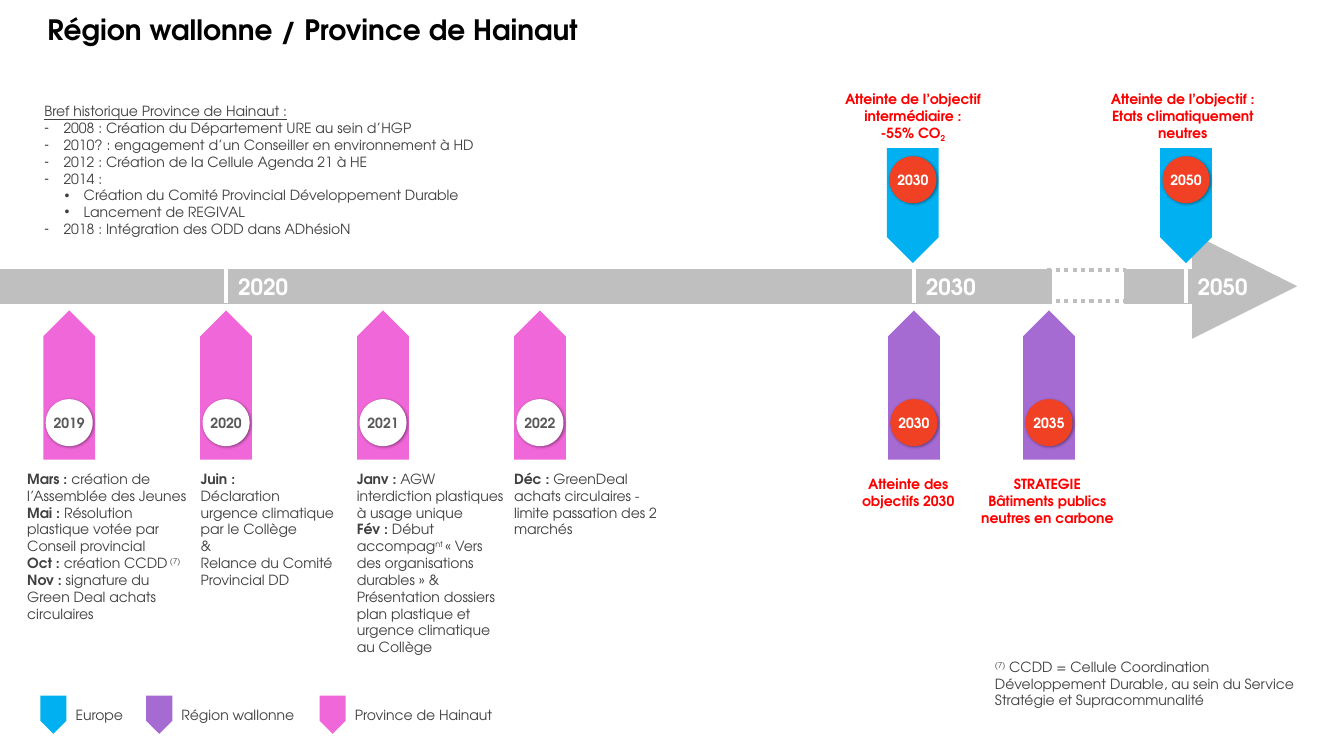
from lxml.etree import SubElement
from pptx import Presentation
from pptx.dml.color import RGBColor
from pptx.enum.dml import MSO_LINE
from pptx.enum.shapes import MSO_CONNECTOR, MSO_SHAPE
from pptx.enum.text import MSO_ANCHOR, MSO_AUTO_SIZE, PP_ALIGN
from pptx.oxml.ns import qn
from pptx.util import Inches, Pt

COLS, ROWS = 40, 22.5
CELL = Inches(1 / 3)
FONT = "TeX Gyre Adventor"
COLORS = {
    "black": "000000", "text": "404040", "year": "595959", "white": "FFFFFF",
    "goal": "FF0000", "disc": "F14124", "axis": "BFBFBF",
    "europe": "00B0F0", "region": "A66BD3", "province": "EF67D8",
}
BOLD = {"bold": True}
SUP = {"base": 30}
SUB = {"base": -25}


def rgb(name):
    return RGBColor.from_string(COLORS[name])


def grid(*cells):
    return [round(c * CELL) for c in cells]


def write(p, text, size=10, color="text", bold=False, underline=False, base=0):
    r = p.add_run()
    r.text = text
    f = r.font
    f.name, f.size, f.bold, f.underline = FONT, Pt(size), bold, underline
    f.color.rgb = rgb(color)
    if base:
        r._r.get_or_add_rPr().set("baseline", str(base * 1000))


class Board:
    """Current slide, measured in grid cells, and its drawing style."""

    def __init__(self, s):
        self.s = s

    def fill_text(self, sp, paragraphs, align=PP_ALIGN.LEFT,
                  anchor=MSO_ANCHOR.TOP, wrap=True, **style):
        """Each paragraph is a string or a list of strings and (string, format)."""
        tf = sp.text_frame
        tf.margin_left = tf.margin_right = tf.margin_top = tf.margin_bottom = 0
        tf.word_wrap, tf.vertical_anchor = wrap, anchor
        tf.auto_size = MSO_AUTO_SIZE.NONE
        for i, runs in enumerate(paragraphs):
            p = tf.paragraphs[0] if i == 0 else tf.add_paragraph()
            p.alignment, p.space_before = align, Pt(0)
            for run in [runs] if isinstance(runs, str) else runs:
                text, extra = (run, {}) if isinstance(run, str) else run
                write(p, text, **{**style, **extra})
        return tf

    def text(self, x, y, w, h, paragraphs, **style):
        sp = self.s.shapes.add_textbox(*grid(x, y, w, h))
        self.fill_text(sp, paragraphs, **style)

    def placeholder(self, idx, x, y, w, h, paragraphs, **style):
        sp = self.s.placeholders[idx]
        sp.left, sp.top, sp.width, sp.height = grid(x, y, w, h)
        return self.fill_text(sp, paragraphs, **style)

    def bullet(self, p, char, indent):
        pPr = p._p.get_or_add_pPr()
        pPr.set("marL", str(Inches(indent)))
        pPr.set("indent", str(-Inches(0.19) if char else 0))
        if char:
            SubElement(pPr, qn("a:buChar"), char=char)
        else:
            SubElement(pPr, qn("a:buNone"))

    def shape(self, kind, x, y, w, h, color):
        sp = self.s.shapes.add_shape(kind, *grid(x, y, w, h))
        sp.shadow.inherit = False
        sp.fill.solid()
        sp.fill.fore_color.rgb = rgb(color)
        sp.line.fill.background()
        return sp

    def pointer(self, x, y, w, h, color, up=False):
        sp = self.shape(MSO_SHAPE.DOWN_ARROW, x, y, w, h, color)
        sp.adjustments[0], sp.adjustments[1] = 1, 0.5
        sp.rotation = 180 if up else 0

    def disc(self, cx, y, year, color, ink):
        size = 1.4
        sp = self.shape(MSO_SHAPE.OVAL, cx - size / 2, y, size, size, color)
        effects = sp._element.spPr.find(qn("a:effectLst"))
        shadow = SubElement(effects, qn("a:outerShdw"), blurRad=str(Pt(2)),
                            dist=str(Pt(1)), dir="2700000", rotWithShape="0")
        black = SubElement(shadow, qn("a:srgbClr"), val=COLORS["black"])
        SubElement(black, qn("a:alpha"), val="40000")
        self.fill_text(sp, [year], align=PP_ALIGN.CENTER, wrap=False,
                       anchor=MSO_ANCHOR.MIDDLE, color=ink, bold=True)

    def line(self, x1, y1, x2, y2, color, width, dash=None, arrow=False):
        c = self.s.shapes.add_connector(MSO_CONNECTOR.STRAIGHT, *grid(x1, y1, x2, y2))
        c.line.color.rgb = rgb(color)
        c.line.width = Pt(width)
        if dash:
            c.line.dash_style = dash
        if arrow:
            SubElement(c.line._get_or_add_ln(), qn("a:tailEnd"), type="triangle")
        SubElement(c._element.spPr, qn("a:effectLst"))

    def milestone(self, cx, year, color, above=False, disc="disc", ink="white"):
        w = 1.54
        y, h, disc_y = (4.41, 3.42, 4.65) if above else (9.24, 4.44, 11.88)
        self.pointer(cx - w / 2, y, w, h, color, up=not above)
        self.disc(cx, disc_y, year, disc, ink)

    def goal(self, cx, y, w, paragraphs):
        self.text(cx - w / 2, y, w, 1.5, paragraphs, align=PP_ALIGN.CENTER,
                  color="goal", bold=True)


HISTORY = [
    ("", 0, "Bref historique Province de Hainaut :"),
    ("-", 0.19, "2008 : Création du Département URE au sein d’HGP"),
    ("-", 0.19, "2010? : engagement d’un Conseiller en environnement à HD"),
    ("-", 0.19, "2012 : Création de la Cellule Agenda 21 à HE"),
    ("-", 0.19, "2014 :"),
    ("•", 0.39, "Création du Comité Provincial Développement Durable"),
    ("•", 0.39, "Lancement de REGIVAL"),
    ("-", 0.19, "2018 : Intégration des ODD dans ADhésioN"),
]
# Year, text left, text width, paragraphs
PROVINCE = [
    ("2019", 0.81, 4.77, [
        [("Mars : ", BOLD), "création de l’Assemblée des Jeunes"],
        [("Mai : ", BOLD), "Résolution plastique votée par Conseil provincial"],
        [("Oct : ", BOLD), "création CCDD", (" (7)", SUP)],
        [("Nov : ", BOLD), "signature du Green Deal achats circulaires"]]),
    ("2020", 5.97, 4.14, [
        [("Juin :", BOLD)], "Déclaration urgence climatique par le Collège",
        "&", "Relance du Comité Provincial DD"]),
    ("2021", 10.62, 4.47, [
        [("Janv : ", BOLD), "AGW interdiction plastiques à usage unique"],
        [("Fév : ", BOLD), "Début accompag", ("nt ", SUP),
         "« Vers des organisations durables » &"],
        "Présentation dossiers plan plastique et urgence climatique au Collège"]),
    ("2022", 15.3, 4.26, [
        [("Déc : ", BOLD),
         "GreenDeal achats circulaires - limite passation des 2 marchés"]]),
]
# Arrow centre, year, colour, above the axis, text centre, top, width, paragraphs
GOALS = [
    (27.2, "2030", "region", False, 27.03, 14.16, 4.02,
     ["Atteinte des objectifs 2030"]),
    (31.22, "2035", "region", False, 31.17, 14.16, 4.26,
     ["STRATEGIE", "Bâtiments publics neutres en carbone"]),
    (27.17, "2030", "europe", True, 27.17, 2.7, 4.35,
     ["Atteinte de l’objectif intermédiaire :", ["-55% CO", ("2", SUB)]]),
    (35.3, "2050", "europe", True, 35.2, 2.7, 4.35,
     ["Atteinte de l’objectif :", "Etats climatiquement neutres"]),
]
LEGEND = [(1.2, "europe", "Europe"), (4.35, "region", "Région wallonne"),
          (9.51, "province", "Province de Hainaut")]


def main():
    prs = Presentation()
    prs.slide_width, prs.slide_height = grid(COLS, ROWS)
    b = Board(prs.slides.add_slide(prs.slide_layouts[1]))

    # Title and history list
    tf = b.placeholder(0, 1.41, 0.48, 37.2, 1.77,
                       ["Région wallonne / Province de Hainaut"],
                       size=20, color="black", bold=True)
    tf.paragraphs[0].line_spacing = 0.9
    tf = b.placeholder(1, 1.32, 3.06, 13, 4.05, [text for *_, text in HISTORY])
    for p, (char, indent, _) in zip(tf.paragraphs, HISTORY):
        b.bullet(p, char, indent)
    tf.paragraphs[0].runs[0].font.underline = True

    # Time axis with its dotted gap
    b.line(33.45, 8.52, 38.61, 8.52, "axis", 25, arrow=True)
    b.line(0, 8.52, 31.32, 8.52, "axis", 25)
    for y in (8.04, 8.97):
        b.line(31.17, y, 33.51, y, "axis", 3, dash=MSO_LINE.ROUND_DOT)
    for x, year in ((6.73, "2020"), (27.2, "2030"), (35.29, "2050")):
        b.line(x, 7.98, x, 9.03, "white", 2.75)
        b.text(x + 0.17, 8.13, 1.86, 0.78, [year], align=PP_ALIGN.CENTER,
               size=16, color="white", bold=True)

    # Province milestones, evenly spaced
    for i, (year, x, w, paragraphs) in enumerate(PROVINCE):
        b.milestone(2.06 + 4.67 * i, year, "province", disc="white", ink="year")
        b.text(x, 14, w, 5.55, paragraphs)

    # Regional and European goals
    for cx, year, color, above, text_cx, y, w, paragraphs in GOALS:
        b.milestone(cx, year, color, above)
        b.goal(text_cx, y, w, paragraphs)

    # Legend and footnote
    for x, color, label in LEGEND:
        b.pointer(x, 20.7, 0.78, 1.14, color)
        b.text(x + 1.05, 21.03, 4.23, 0.5, [label])
    b.text(29.61, 19.59, 9.27, 2, [[
        ("(7)", SUP), " CCDD = Cellule Coordination Développement Durable, "
        "au sein du Service Stratégie et Supracommunalité"]])

    prs.save("out.pptx")


if __name__ == "__main__":
    main()
